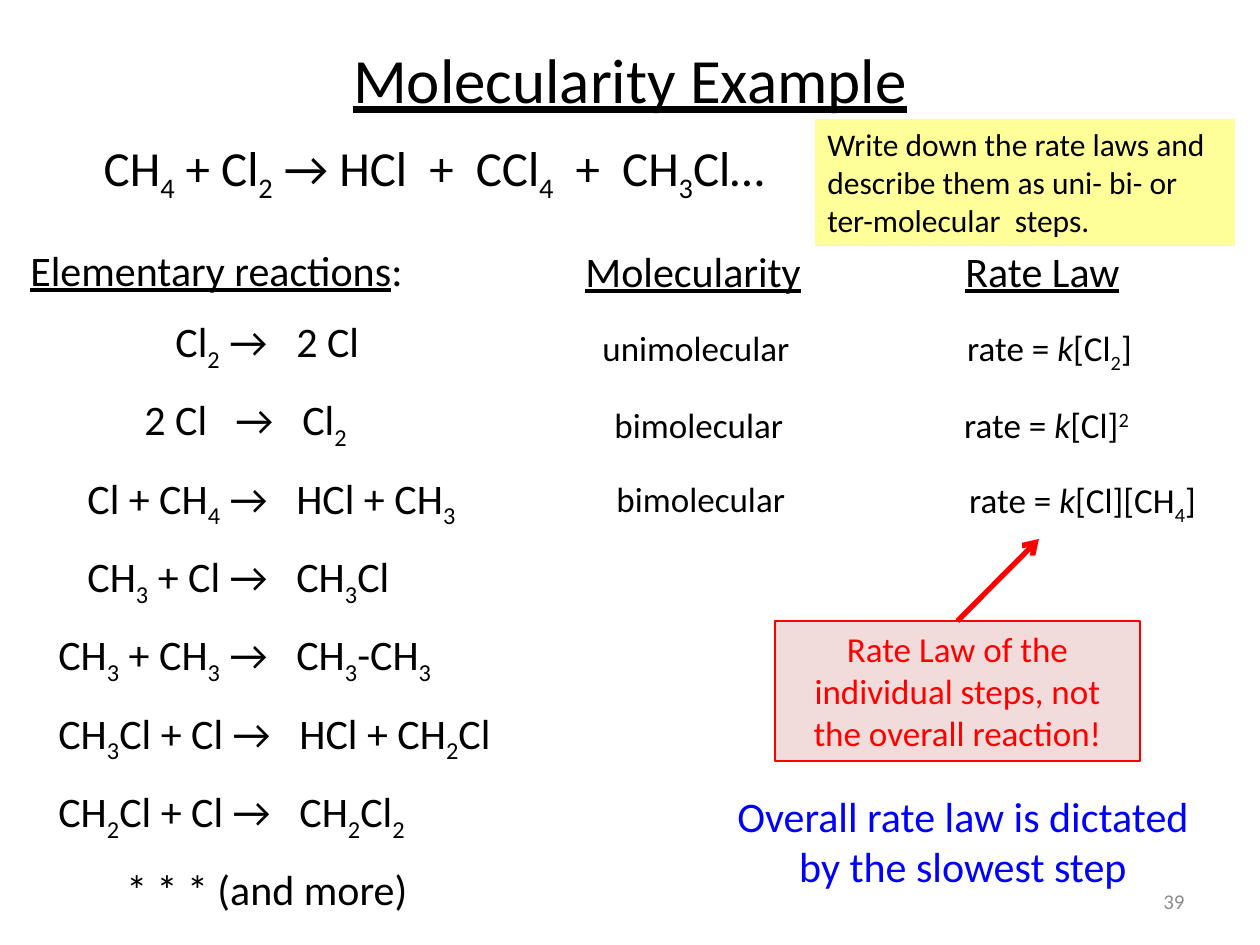
"""Build the Molecularity Example slide."""
from dataclasses import dataclass

import lxml.etree
import pptx
import pptx.dml.color
import pptx.enum.shapes
import pptx.enum.text
import pptx.oxml.ns
import pptx.util

ALIGN = pptx.enum.text.PP_ALIGN
ANCHOR = pptx.enum.text.MSO_ANCHOR
KIND = pptx.enum.shapes
MARKS = {"~": "sub", "^": "super", "/": "italic", "_": "under"}
BASE = {"sub": "-25000", "super": "30000"}


@dataclass
class Step:
    text: str
    tabs: tuple = ()


@dataclass
class Label:
    text: str
    area: tuple
    size: int = 20
    color: str = "000000"
    align: int = ALIGN.LEFT
    anchor: int = ANCHOR.TOP
    wrap: bool = True


STEPS = [
    Step("_Elementary reactions|:"),
    Step("\tCl|~2| →\t2 Cl", (145, 266)),
    Step("\t2 Cl\t→\tCl|~2", (114, 205, 272)),
    Step("\tCl + CH|~4| →\tHCl + CH|~3", (57, 266)),
    Step("\tCH|~3| + Cl →\tCH|~3|Cl", (57, 266)),
    Step("\tCH|~3| + CH|~3| →\tCH|~3|-CH|~3", (28, 266)),
    Step("\tCH|~3|Cl + Cl →\tHCl + CH|~2|Cl", (28, 269)),
    Step("\tCH|~2|Cl + Cl →\tCH|~2|Cl|~2", (28, 269)),
    Step("\t* * * (and more)", (96,)),
]

LABELS = [
    Label("_Molecularity Example", (63, -1, 1134, 158), 36,
          align=ALIGN.CENTER, anchor=ANCHOR.MIDDLE),
    Label("CH|~4| + Cl|~2| → HCl  +  CCl|~4|  +  CH|~3|Cl…",
          (6, 131, 856, 72), 28, align=ALIGN.CENTER),
    Label("_Molecularity", (573, 239, 243, 63), 24, wrap=False),
    Label("_Rate Law", (953, 239, 181, 63), 24, wrap=False),
    Label("unimolecular", (590, 320, 219, 55)),
    Label("bimolecular", (602, 397, 219, 55)),
    Label("bimolecular", (604, 471, 219, 55)),
    Label("rate = |/k|[Cl|~2|]", (940, 320, 219, 55), align=ALIGN.CENTER),
    Label("rate = |/k|[Cl]|^2", (937, 397, 219, 55), align=ALIGN.CENTER),
    Label("rate = |/k|[Cl][CH|~4|]", (940, 472, 285, 55), align=ALIGN.CENTER),
    Label("Overall rate law is dictated by the slowest step",
          (706, 784, 514, 115), 24, "0000FF", ALIGN.CENTER),
    Label("39", (903, 876, 294, 50), 12, "8C8C8C", ALIGN.RIGHT, ANCHOR.MIDDLE),
]


def px(count: int) -> int:
    return round(count * 914400 / 126)


def rgb(code: str) -> pptx.dml.color.RGBColor:
    return pptx.dml.color.RGBColor.from_string(code)


def child(parent, tag: str, **attrs: str):
    node = lxml.etree.SubElement(parent, pptx.oxml.ns.qn(tag))
    for key, value in attrs.items():
        node.set(key, value)
    return node


def write(para, text: str, *, size: int = 20, color: str = "000000",
          align: int = ALIGN.LEFT, tabs: tuple = ()) -> None:
    para.alignment = align
    if tabs:
        stops = child(para._p.get_or_add_pPr(), "a:tabLst")
        for stop in tabs:
            child(stops, "a:tab", pos=str(px(stop)), algn="l")
    for part in text.split("|"):
        if not part:
            continue
        mark = MARKS.get(part[0])
        run = para.add_run()
        run.text = part[1:] if mark else part
        font = run.font
        font.name, font.size = "Calibri", pptx.util.Pt(size)
        font.color.rgb = rgb(color)
        if mark == "italic":
            font.italic = True
        elif mark == "under":
            font.underline = True
        elif mark:
            run._r.get_or_add_rPr().set("baseline", BASE[mark])


def fill(shape, item: Label) -> None:
    frame = shape.text_frame
    frame.word_wrap = item.wrap
    frame.vertical_anchor = item.anchor
    write(frame.paragraphs[0], item.text, size=item.size,
          color=item.color, align=item.align)


def label(slide, item: Label) -> None:
    fill(slide.shapes.add_textbox(*map(px, item.area)), item)


def panel(slide, item: Label, back: str, edge: str = ""):
    shape = slide.shapes.add_shape(KIND.MSO_SHAPE.RECTANGLE, *map(px, item.area))
    shape.shadow.inherit = False
    shape.fill.solid()
    shape.fill.fore_color.rgb = rgb(back)
    if edge:
        shape.line.color.rgb = rgb(edge)
        shape.line.width = pptx.util.Pt(0.75)
    else:
        shape.line.fill.background()
    fill(shape, item)
    return shape


def steps(slide, items: list) -> None:
    frame = slide.shapes.add_textbox(*map(px, (18, 238, 640, 674))).text_frame
    frame.word_wrap = True
    for index, item in enumerate(items):
        para = frame.add_paragraph() if index else frame.paragraphs[0]
        write(para, item.text, size=24, tabs=item.tabs)
        if index:
            para.space_before = pptx.util.Pt(12)


def arrow(slide, box, tip: tuple, color: str) -> None:
    line = slide.shapes.add_connector(
        KIND.MSO_CONNECTOR.STRAIGHT, box.left + box.width // 2, box.top,
        *map(px, tip))
    line.begin_connect(box, 0)
    line.line.color.rgb = rgb(color)
    line.line.width = pptx.util.Pt(3)
    child(line.line._get_or_add_ln(), "a:tailEnd", type="arrow")
    child(line._element.spPr, "a:effectLst")


def main() -> None:
    deck = pptx.Presentation()
    deck.slide_width, deck.slide_height = px(1260), px(945)
    slide = deck.slides.add_slide(deck.slide_layouts[6])
    steps(slide, STEPS)
    panel(slide, Label("Write down the rate laws and describe them as "
                       "uni- bi- or ter-molecular  steps.",
                       (815, 119, 420, 127), 18), "FFFF99")
    for item in LABELS:
        label(slide, item)
    note = panel(slide, Label("Rate Law of the individual steps, "
                              "not the overall reaction!",
                              (775, 621, 365, 140), 20, "FF0000",
                              ALIGN.CENTER), "F2DCDB", "FF0000")
    arrow(slide, note, (1039, 539), "FF0000")
    deck.save("out.pptx")


if __name__ == "__main__":
    main()
